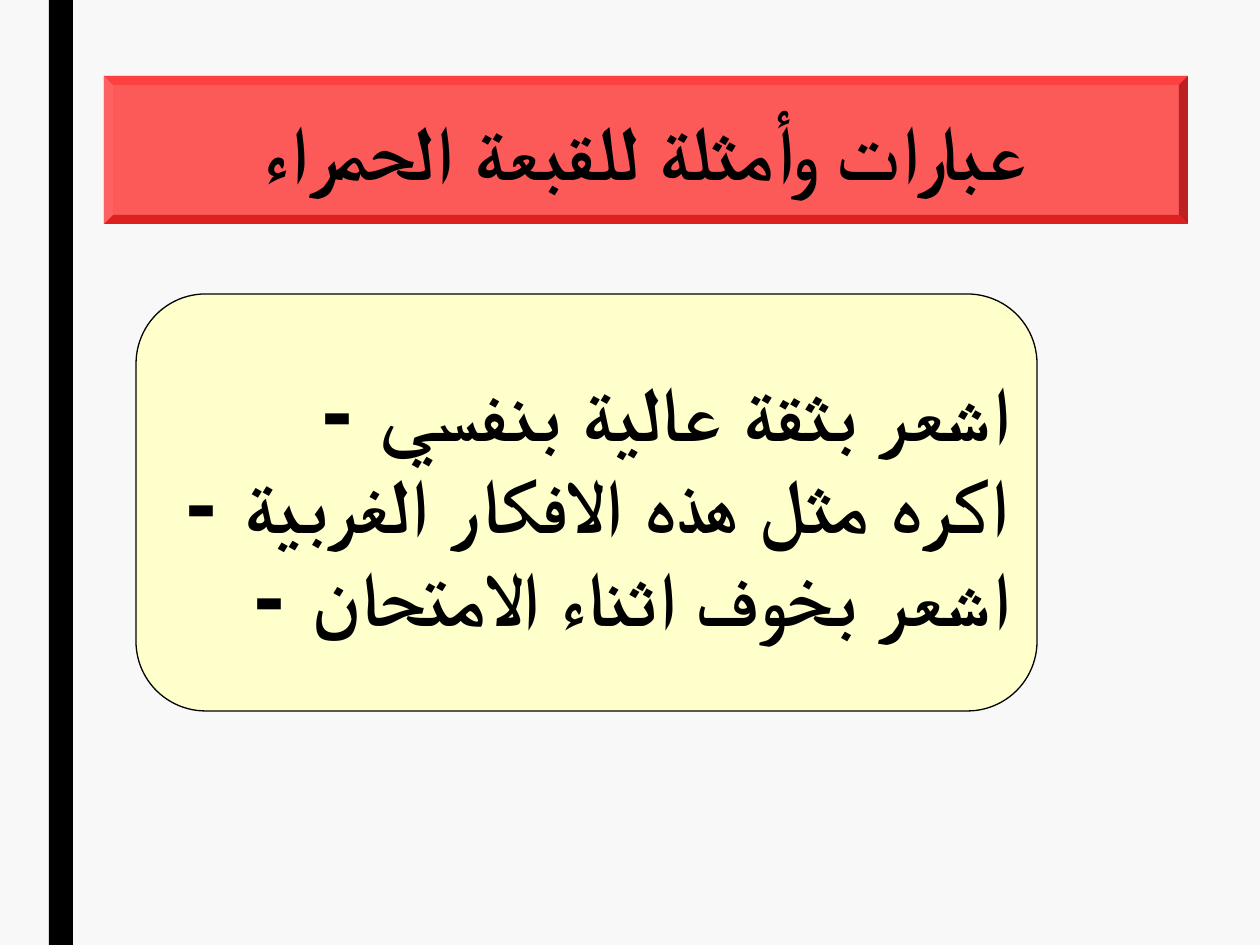
"""Build a slide with a bevelled red title banner and a rounded card of three phrases."""
from lxml import etree
from pptx import Presentation
from pptx.dml.color import RGBColor
from pptx.enum.shapes import MSO_SHAPE
from pptx.enum.text import MSO_ANCHOR, MSO_AUTO_SIZE, PP_ALIGN
from pptx.oxml.ns import qn
from pptx.util import Emu, Pt

RECT, ROUND = MSO_SHAPE.RECTANGLE, MSO_SHAPE.ROUNDED_RECTANGLE
CENTER, RIGHT = PP_ALIGN.CENTER, PP_ALIGN.RIGHT
MIDDLE, NO_FIT = MSO_ANCHOR.MIDDLE, MSO_AUTO_SIZE.NONE
PX = 914400 // 126

TITLE = "عبارات وأمثلة للقبعة الحمراء"
PHRASES = [
    "- اشعر بثقة عالية بنفسي",
    "- اكره مثل هذه الافكار الغربية",
    "- اشعر بخوف اثناء الامتحان",
]
COLORS = {
    "back": "F8F8F8", "ink": "000000", "card": "FFFFCC", "banner": "FF0000",
    "top": "FF3333", "left": "FF6666", "right": "990000", "bottom": "CC0000",
}
BAR = (49, 0, 24, 945)
BANNER = (104, 76, 1084, 148)
BEVEL = 9
BANNER_ALPHA = 64
CARD = (136, 294, 901, 417)
TITLE_BOX = (113, 101, 1066, 97)
LIST_BOX = (47, 333, 969, 340)


def px(*values):
    return [Emu(v * PX) for v in values]


def paint(sp, color, alpha=None, line=None):
    sp.shadow.inherit = False
    sp.fill.solid()
    sp.fill.fore_color.rgb = RGBColor.from_string(COLORS[color])
    if alpha:
        clr = sp.element.spPr.find(qn("a:solidFill"))[0]
        etree.SubElement(clr, qn("a:alpha"), val=str(alpha * 1000))
    if line:
        sp.line.color.rgb = RGBColor.from_string(COLORS[line])
        sp.line.width = Pt(0.75)
    else:
        sp.line.fill.background()


def write(sp, lines, box, font, align, arabic_font="Arial", size=44, color="ink"):
    sp.left, sp.top, sp.width, sp.height = px(*box)
    sp.element.getparent().append(sp.element)
    tf = sp.text_frame
    tf.word_wrap, tf.auto_size, tf.vertical_anchor = True, NO_FIT, MIDDLE
    tf.margin_left = tf.margin_right = tf.margin_top = tf.margin_bottom = Pt(3.6)
    for i, line in enumerate(lines):
        p = tf.add_paragraph() if i else tf.paragraphs[0]
        p.alignment, p.line_spacing = align, 1.0
        p.space_before = p.space_after = Pt(0)
        pPr = p._p.get_or_add_pPr()
        for name in ("marL", "indent", "rtl"):
            pPr.set(name, "0")
        etree.SubElement(pPr, qn("a:buNone"))
        r = p.add_run()
        r.text = line
        r.font.name, r.font.size, r.font.bold = font, Pt(size), True
        r.font.color.rgb = RGBColor.from_string(COLORS[color])
        etree.SubElement(r.font._element, qn("a:cs"), typeface=arabic_font)


def add_banner(s):
    x, y, w, h = BANNER
    paint(s.shapes.add_shape(RECT, *px(*BANNER)), "banner", BANNER_ALPHA)
    outer = [(x, y), (x + w, y), (x + w, y + h), (x, y + h)]
    x, y, w, h = x + BEVEL, y + BEVEL, w - 2 * BEVEL, h - 2 * BEVEL
    inner = [(x, y), (x + w, y), (x + w, y + h), (x, y + h)]
    for i, side in enumerate(("top", "right", "bottom", "left")):
        j = (i + 1) % 4
        fb = s.shapes.build_freeform(*outer[i], scale=PX)
        fb.add_line_segments([inner[i], inner[j], outer[j]], close=True)
        paint(fb.convert_to_shape(), side, BANNER_ALPHA)


def main():
    prs = Presentation()
    prs.slide_width, prs.slide_height = px(1260, 945)
    s = prs.slides.add_slide(prs.slide_layouts[1])
    s.background.fill.solid()
    s.background.fill.fore_color.rgb = RGBColor.from_string(COLORS["back"])

    paint(s.shapes.add_shape(RECT, *px(*BAR)), "ink")
    add_banner(s)
    write(s.shapes.title, [TITLE], TITLE_BOX, "Arial", CENTER)

    card = s.shapes.add_shape(ROUND, *px(*CARD))
    card.adjustments[0] = 0.167
    paint(card, "card", line="ink")
    write(s.placeholders[1], PHRASES, LIST_BOX, "DejaVu Sans", RIGHT)

    prs.save("out.pptx")


if __name__ == "__main__":
    main()
